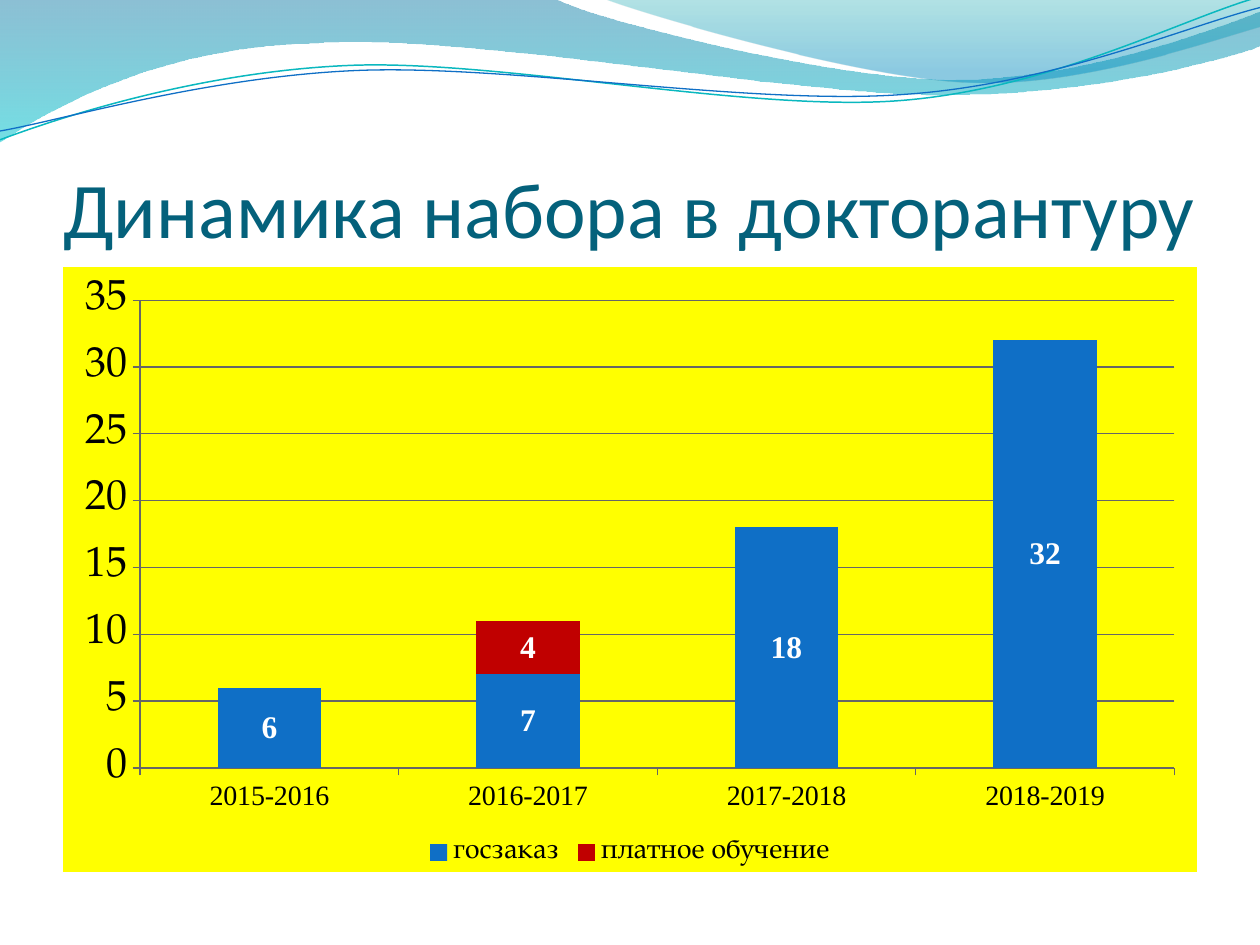
from lxml.etree import SubElement, fromstring
from pptx import Presentation
from pptx.chart.data import CategoryChartData
from pptx.dml.color import RGBColor
from pptx.enum.chart import XL_CHART_TYPE as ChartType, XL_LEGEND_POSITION as LegendPosition
from pptx.enum.chart import XL_TICK_MARK as TickMark
from pptx.enum.text import MSO_ANCHOR as Anchor, MSO_AUTO_SIZE as AutoSize, PP_ALIGN as Align
from pptx.oxml.ns import nsdecls, qn
from pptx.util import Inches, Pt

TITLE = "Динамика набора в докторантуру"
YEARS = ["2015-2016", "2016-2017", "2017-2018", "2018-2019"]
SERIES = [
    ("госзаказ", [6, 7, 18, 32], "0F6FC6"),
    ("платное обучение", [None, 4, None, None], "C00000"),
]
BANDS = [
    ([[(0, 0)], [(4.4, -0.01)],
      [(4.76, 0.17), (6.64, 0.63), (7.58, 0.63)],
      [(8.53, 0.63), (9.58, 0.26), (10, 0.09)],
      [(10.01, 0.36)],
      [(9.83, 0.44), (8.7, 0.76), (7.46, 0.75)],
      [(6.22, 0.75), (3.82, 0.28), (2.57, 0.34)],
      [(1.29, 0.36), (0.46, 0.83), (-0.01, 1.13)],
      [(0, 0)]],
     [(0, "0074A1", 45), (1, "00C6CF", 55)]),
    ([[(4.79, -0.01)],
      [(5.09, 0.11), (6.82, 0.62), (7.69, 0.65)],
      [(8.56, 0.69), (9.61, 0.32), (10, 0.21)],
      [(10, 0)],
      [(4.79, -0.01)]],
     [(0, "00A1A9", 30), (0.8, "008BBF", 45)]),
]
WAVES = [
    ([[(0, 1.11)],
      [(0.48, 0.93), (1.58, 0.57), (2.77, 0.52)],
      [(3.95, 0.47), (5.93, 0.89), (7.13, 0.8)],
      [(8.33, 0.71), (9.38, 0.15), (9.98, -0.02)]], "0AB8BF", 0.85),
    ([[(0, 1.04)],
      [(0.47, 0.96), (1.64, 0.61), (2.83, 0.56)],
      [(4.03, 0.51), (5.97, 0.84), (7.17, 0.75)],
      [(8.36, 0.67), (9.41, 0.21), (10, 0.06)]], "0F6FC6", 0.75),
]


def color(value):
    return RGBColor.from_string(value)


def style_font(font, name, size, value, bold=False):
    font.name, font.size, font.bold = name, Pt(size), bold
    font.color.rgb = color(value)


def add_outline(page, segments, close):
    points = [(Inches(x), Inches(y)) for segment in segments for x, y in segment]
    builder = page.shapes.build_freeform(*points[0], scale=1.0)
    builder.add_line_segments(points[1:], close=close)
    shape = builder.convert_to_shape()
    shape.shadow.inherit = False
    lines = iter(list(shape._element.spPr.iter(qn("a:lnTo"))))
    for segment in segments[1:]:
        steps = [next(lines) for _ in segment]
        if len(steps) == 3:
            curve = fromstring(f'<a:cubicBezTo {nsdecls("a")}/>')
            steps[0].addprevious(curve)
            for step in steps:
                curve.append(step[0])
                step.getparent().remove(step)
    return shape


def add_band(page, segments, stops):
    band = add_outline(page, segments, True)
    band.line.fill.background()
    band.fill.gradient()
    band.fill.gradient_angle = 270
    for stop, (position, value, _) in zip(band.fill.gradient_stops, stops):
        stop.position = position
        stop.color.rgb = color(value)
    for node, (_, _, opacity) in zip(band._element.spPr.iter(qn("a:srgbClr")), stops):
        SubElement(node, qn("a:alpha")).set("val", str(opacity * 1000))


def add_wave(page, segments, value, width):
    wave = add_outline(page, segments, False)
    wave.fill.background()
    wave.line.color.rgb = color(value)
    wave.line.width = Pt(width)


def set_title(page):
    title = page.shapes.title
    title.left, title.top, title.width, title.height = map(Inches, (0.5, 0.77, 9, 1.25))
    frame = title.text_frame
    frame.text = TITLE
    frame.word_wrap, frame.auto_size = True, AutoSize.NONE
    frame.vertical_anchor = Anchor.BOTTOM
    frame.margin_left = frame.margin_right = frame.margin_bottom = 0
    frame.margin_top = Inches(0.05)
    para = frame.paragraphs[0]
    para.alignment = Align.LEFT
    style_font(para.font, "Calibri", 45, "04617B")


def add_enrolment_chart(page):
    data = CategoryChartData()
    data.categories = YEARS
    for name, values, _ in SERIES:
        data.add_series(name, values)
    place = map(Inches, (0.5, 2.12, 9, 4.8))
    chart = page.shapes.add_chart(ChartType.COLUMN_STACKED, *place, data).chart
    style_font(chart.font, "TeX Gyre Pagella", 10, "000000")
    chart.has_title = False
    background = fromstring(
        f'<c:spPr {nsdecls("c", "a")}><a:solidFill><a:srgbClr val="FFFF00"/></a:solidFill>'
        "<a:ln><a:noFill/></a:ln></c:spPr>")
    chart._chartSpace.find(qn("c:txPr")).addprevious(background)

    plot = chart.plots[0]
    plot.gap_width, plot.overlap, plot.vary_by_categories = 150, 100, False
    for series, (_, _, value) in zip(plot.series, SERIES):
        series.format.fill.solid()
        series.format.fill.fore_color.rgb = color(value)
        labels = series.data_labels
        labels.show_value = True
        style_font(labels.font, "Times New Roman", 18, "FFFFFF", True)

    years, counts = chart.category_axis, chart.value_axis
    for axis, name, size in ((years, "Times New Roman", 16), (counts, "TeX Gyre Pagella", 24)):
        axis.major_tick_mark = TickMark.OUTSIDE
        axis.format.line.color.rgb = color("666666")
        style_font(axis.tick_labels.font, name, size, "000000")
    counts.minimum_scale, counts.maximum_scale, counts.major_unit = 0, 35, 5
    counts.has_major_gridlines = True
    counts.major_gridlines.format.line.color.rgb = color("666666")

    chart.has_legend = True
    chart.legend.position = LegendPosition.BOTTOM
    chart.legend.include_in_layout = False
    style_font(chart.legend.font, "TeX Gyre Pagella", 16, "000000")


def main():
    deck = Presentation()
    deck.slide_width, deck.slide_height = Inches(10), Inches(7.5)
    page = deck.slides.add_slide(deck.slide_layouts[5])
    for band in BANDS:
        add_band(page, *band)
    for wave in WAVES:
        add_wave(page, *wave)
    set_title(page)
    add_enrolment_chart(page)
    deck.save("out.pptx")


if __name__ == "__main__":
    main()
